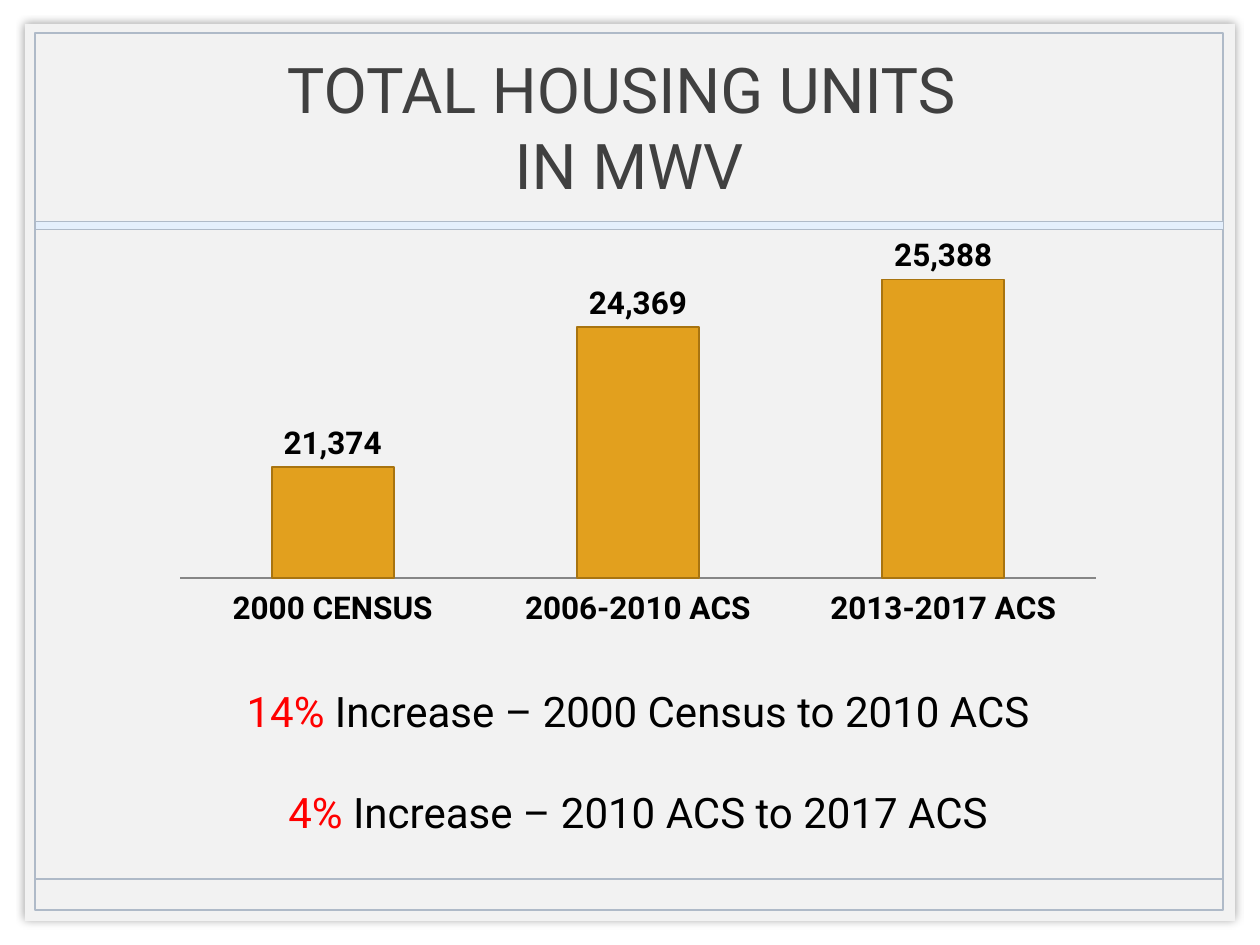
from lxml import etree
from pptx import Presentation
from pptx.chart.data import CategoryChartData
from pptx.dml.color import RGBColor
from pptx.enum.chart import XL_CHART_TYPE as ChartType
from pptx.enum.chart import XL_LABEL_POSITION as LabelPosition
from pptx.enum.chart import XL_TICK_LABEL_POSITION as TickLabels
from pptx.enum.chart import XL_TICK_MARK as TickMark
from pptx.enum.shapes import MSO_CONNECTOR as Connector
from pptx.enum.shapes import MSO_SHAPE as Shape
from pptx.enum.text import MSO_ANCHOR as Anchor
from pptx.enum.text import PP_ALIGN as Align
from pptx.oxml import parse_xml
from pptx.oxml.ns import nsdecls, qn
from pptx.util import Pt

PX = 914400 / 126
FONT = "Roboto"
COLORS = {
    "panel": "F2F2F2", "rule": "AFBAC8", "band": "E4EFFC",
    "title": "404040", "text": "000000", "accent": "FF0000",
    "bar": "E2A01E", "bar_edge": "A87410", "axis": "868686",
}


def px(*lengths):
    return [round(length * PX) for length in lengths]


def rgb(name):
    return RGBColor.from_string(COLORS[name])


class SlideBuilder:
    def __init__(self, page):
        self.page = page

    def stroke(self, line, color, width):
        line.color.rgb = rgb(color)
        line.width = Pt(width)

    def style(self, font, size, color="text", bold=False):
        font.name = FONT
        font.size = Pt(size)
        font.bold = bold
        font.color.rgb = rgb(color)

    def rectangle(self, at, fill=None, line_width=None):
        box = self.page.shapes.add_shape(Shape.RECTANGLE, *px(*at))
        box.shadow.inherit = False
        if fill:
            box.fill.solid()
            box.fill.fore_color.rgb = rgb(fill)
        else:
            box.fill.background()
        if line_width:
            self.stroke(box.line, "rule", line_width)
        else:
            box.line.fill.background()
        return box

    def glow(self, box):
        effects = box._element.spPr.find(qn("a:effectLst"))
        effects.append(parse_xml(
            f'<a:outerShdw {nsdecls("a")} blurRad="{Pt(5)}" dist="0" dir="0">'
            '<a:srgbClr val="000000"><a:alpha val="40000"/></a:srgbClr>'
            '</a:outerShdw>'))

    def rule(self, start, end):
        line = self.page.shapes.add_connector(
            Connector.STRAIGHT, *px(*start, *end))
        self.stroke(line.line, "rule", 1)
        etree.SubElement(line._element.spPr, qn("a:effectLst"))

    def text(self, at, paragraphs, size, anchor=Anchor.TOP, gap=0):
        """Each paragraph is a list of (words, color) spans."""
        frame = self.page.shapes.add_textbox(*px(*at)).text_frame
        frame.word_wrap = True
        frame.vertical_anchor = anchor
        for index, spans in enumerate(paragraphs):
            para = frame.add_paragraph() if index else frame.paragraphs[0]
            para.alignment = Align.CENTER
            para.space_before = Pt(gap if index else 0)
            para.font.name = FONT
            para.font.size = Pt(size)
            for words, color in spans:
                for part, piece in enumerate(words.split("\n")):
                    if part:
                        para.add_line_break()
                    span = para.add_run()
                    span.text = piece
                    self.style(span.font, size, color)

    def column_chart(self, at, values, low, high, plot):
        data = CategoryChartData(number_format="#,##0")
        data.categories = list(values)
        data.add_series("Series 1", list(values.values()))
        chart = self.page.shapes.add_chart(
            ChartType.COLUMN_CLUSTERED, *px(*at), data).chart
        chart.has_legend = False
        chart.has_title = False
        self.style(chart.font, 18)

        # Axes
        value_axis = chart.value_axis
        value_axis.minimum_scale = low
        value_axis.maximum_scale = high
        value_axis.has_major_gridlines = False
        value_axis.visible = False
        category_axis = chart.category_axis
        category_axis.major_tick_mark = TickMark.NONE
        category_axis.tick_label_position = TickLabels.LOW
        self.style(category_axis.tick_labels.font, 18, bold=True)
        self.stroke(category_axis.format.line, "axis", 1)

        # Columns and their labels
        columns = chart.plots[0]
        columns.vary_by_categories = False
        columns.gap_width = 150
        columns.overlap = -25
        series = columns.series[0]
        series.format.fill.solid()
        series.format.fill.fore_color.rgb = rgb("bar")
        self.stroke(series.format.line, "bar_edge", 1)
        labels = series.data_labels
        labels.show_value = True
        labels.position = LabelPosition.OUTSIDE_END
        labels.number_format = "#,##0"
        labels.number_format_is_linked = False
        self.style(labels.font, 18, bold=True)
        self.place_plot(chart, plot)

    def place_plot(self, chart, plot):
        area = chart._chartSpace.chart.plotArea
        for old in area.findall(qn("c:layout")):
            area.remove(old)
        modes = '<c:xMode val="edge"/><c:yMode val="edge"/>'
        sizes = "".join(f'<c:{key} val="{part}"/>'
                        for key, part in zip("xywh", plot))
        area.insert(0, parse_xml(
            f'<c:layout {nsdecls("c")}><c:manualLayout>'
            f'<c:layoutTarget val="inner"/>{modes}{sizes}'
            '</c:manualLayout></c:layout>'))


def main():
    deck = Presentation()
    deck.slide_width, deck.slide_height = px(1260, 945)
    slide = SlideBuilder(deck.slides.add_slide(deck.slide_layouts[6]))

    # Framed background
    slide.glow(slide.rectangle((25, 24, 1210, 897), fill="panel"))
    slide.rectangle((35, 33, 1188, 877), line_width=1)
    slide.rule((35, 879), (1223, 879))
    slide.rectangle((35, 221, 1188, 8), fill="band", line_width=0.25)

    # Title; the space before the break is part of the centred line
    slide.text((123, 34, 1012, 185),
               [[("TOTAL HOUSING UNITS \nIN MWV", "title")]],
               36, anchor=Anchor.MIDDLE)

    # Growth notes
    slide.text((161, 679, 954, 165), [
        [("14%", "accent"), (" Increase – 2000 Census to 2010 ACS", "text")],
        [("4%", "accent"), (" Increase – 2010 ACS to 2017 ACS", "text")],
    ], 24, gap=29)

    # Housing units chart
    units = {"2000 CENSUS": 21374, "2006-2010 ACS": 24369,
             "2013-2017 ACS": 25388}
    slide.column_chart((161, 238, 954, 391), units, 19000, 26000,
                       plot=(0.02, 0.03, 0.96, 0.84))

    deck.save("out.pptx")


if __name__ == "__main__":
    main()
